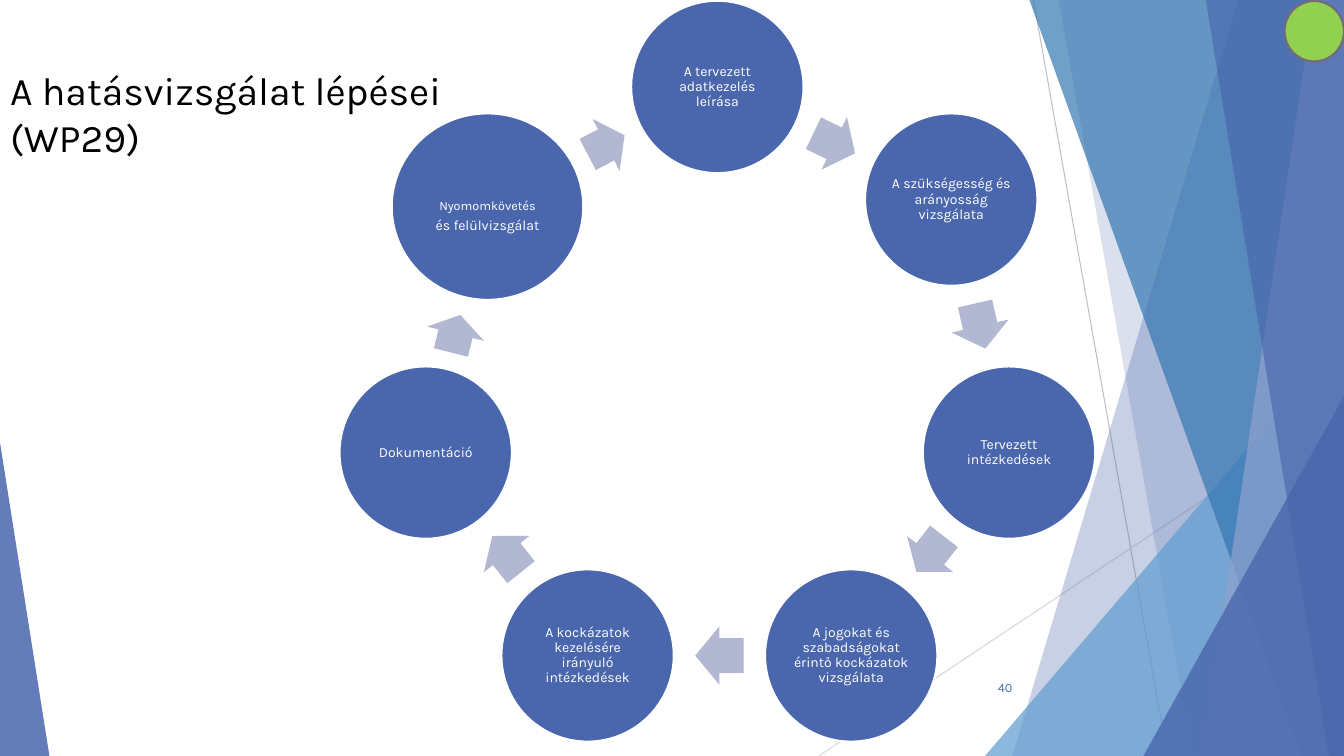
import math
from dataclasses import dataclass
from typing import Any

from lxml import etree
from pptx import Presentation
from pptx import util as u
from pptx.dml import color
from pptx.enum import shapes, text
from pptx.oxml import ns

PX = 9144  # EMU per px, 100 px to the inch
WIDE, HIGH = 1333, 750
KIND = shapes.MSO_SHAPE


@dataclass(frozen=True)
class Theme:
    face: str = "Karla"
    blue: str = "4A66AC"
    sky: str = "629DD1"
    deep: str = "3477B2"
    pale: str = "90A2CF"
    arrow: str = "B2B8D2"
    green: str = "92D050"
    rim: str = "746B76"
    white: str = "FFFFFF"
    black: str = "000000"
    head: int = 28
    body: int = 10
    small: int = 9


@dataclass(frozen=True)
class Ray:
    start: tuple[int, int]
    end: tuple[int, int]
    tint: str


@dataclass(frozen=True)
class Pane:
    """A see-through band between the top and bottom slide edges."""
    points: tuple[tuple[int, int], ...]
    tint: str
    cover: int


@dataclass(frozen=True)
class Wedge:
    """A see-through right triangle; lean 0 or 1 puts its tip left or right."""
    box: tuple[int, int, int, int]
    lean: int
    tint: str
    cover: int


@dataclass(frozen=True)
class Step:
    lines: tuple[tuple[str, int], ...]
    wide: int = 171
    high: int = 171
    shift: tuple[int, int] = (0, 0)
    drop: int = 1  # top inset


T = Theme()
MID, RING = (711.5, 383), 296.7

RAYS = (
    Ray((1025, 0), (1158, HIGH), "BFBFBF"),
    Ray((WIDE, 403), (812, HIGH), "D9D9D9"),
)


def band(top: int, base: int, tint: str, cover: int) -> Pane:
    return Pane(((top, 0), (WIDE, 0), (WIDE, HIGH), (base, HIGH)), tint, cover)


DECOR = (
    band(1228, 1004, T.blue, 30),
    band(1050, 1183, T.blue, 20),
    Wedge((977, 333, 356, 417), 1, T.sky, 72),
    band(1021, 1291, T.deep, 70),
    band(1303, 1192, T.pale, 70),
    band(1196, 1318, T.blue, 65),
    Wedge((1134, 393, 199, 357), 1, T.blue, 80),
    Wedge((0, 439, 49, 311), 0, T.blue, 85),
)

STEPS = (
    Step((("A tervezett adatkezelés leírása", T.body),)),
    Step((("A szükségesség és arányosság vizsgálata", T.body),)),
    Step((("Tervezett intézkedések", T.body),)),
    Step((("A jogokat és szabadságokat érintő kockázatok vizsgálata", T.body),),
         shift=(4, 0)),
    Step((("A kockázatok kezelésére irányuló intézkedések", T.body),)),
    Step((("Dokumentáció", T.body),)),
    Step((("Nyomomkövetés", T.small), ("és felülvizsgálat", T.body)),
         wide=190, high=185, shift=(4, 7), drop=20),
)


def px(*sizes: float) -> list[u.Emu]:
    return [u.Emu(round(size * PX)) for size in sizes]


def rgb(tint: str) -> color.RGBColor:
    return color.RGBColor.from_string(tint)


def apply(thing: Any, form: dict[str, Any]) -> None:
    for name, value in form.items():
        setattr(thing, name, value)


def paint(shape: Any, tint: str, cover: int = 100, rim: str = "") -> None:
    """Fill a shape, with an optional 1.5 pt outline."""
    shape.shadow.inherit = False
    shape.fill.solid()
    shape.fill.fore_color.rgb = rgb(tint)
    if cover < 100:
        mark = shape.element.spPr.find(".//" + ns.qn("a:srgbClr"))
        etree.SubElement(mark, ns.qn("a:alpha"), val=str(cover * 1000))
    if rim:
        shape.line.color.rgb = rgb(rim)
        shape.line.width = u.Pt(1.5)
    else:
        shape.line.fill.background()


def write(shape: Any, lines: tuple[tuple[str, int], ...], tint: str,
          frame: dict[str, Any], para: dict[str, Any]) -> None:
    body = shape.text_frame
    apply(body, {"word_wrap": True, "auto_size": text.MSO_AUTO_SIZE.NONE} | frame)
    for rank, (words, size) in enumerate(lines):
        part = body.add_paragraph() if rank else body.paragraphs[0]
        apply(part, para | ({"space_before": u.Pt(3.5)} if rank else {}))
        run = part.add_run()
        run.text = words
        apply(run.font, {"name": T.face, "size": u.Pt(size)})
        run.font.color.rgb = rgb(tint)


def draw_ray(slide: Any, ray: Ray) -> None:
    line = slide.shapes.add_connector(
        shapes.MSO_CONNECTOR.STRAIGHT, *px(*ray.start, *ray.end))
    line.line.color.rgb = rgb(ray.tint)
    line.line.width = u.Pt(0.75)
    etree.SubElement(line.element.spPr, ns.qn("a:effectLst"))


def draw_decor(slide: Any, item: Pane | Wedge) -> None:
    if isinstance(item, Pane):
        pen = slide.shapes.build_freeform(*item.points[0], scale=PX)
        pen.add_line_segments(item.points[1:], close=True)
        shape = pen.convert_to_shape()
    else:
        shape = slide.shapes.add_shape(KIND.ISOSCELES_TRIANGLE, *px(*item.box))
        shape.adjustments[0] = item.lean
    paint(shape, item.tint, item.cover)


def place(rank: int) -> tuple[float, float]:
    """Centre of a step on the ring, clockwise from the top."""
    turn = math.tau * rank / len(STEPS)
    across, down = STEPS[rank].shift
    return (MID[0] + RING * math.sin(turn) + across,
            MID[1] - RING * math.cos(turn) + down)


def draw_step(slide: Any, rank: int) -> None:
    step, (x, y) = STEPS[rank], place(rank)
    disc = slide.shapes.add_shape(KIND.OVAL, *px(
        x - step.wide / 2, y - step.high / 2, step.wide, step.high))
    paint(disc, T.blue, rim=T.white)
    left, top, right, base = px(1, step.drop, 1, 1)
    write(disc, step.lines, T.white,
          {"margin_left": left, "margin_top": top, "margin_right": right,
           "margin_bottom": base, "vertical_anchor": text.MSO_ANCHOR.MIDDLE},
          {"alignment": text.PP_ALIGN.CENTER, "line_spacing": 0.9})


def draw_arrow(slide: Any, rank: int) -> None:
    """Centre an arrow in the gap between a step and the next one."""
    after = (rank + 1) % len(STEPS)
    (x, y), (next_x, next_y) = place(rank), place(after)
    reach = math.dist((x, y), (next_x, next_y))
    near, far = [(STEPS[n].wide + STEPS[n].high) / 4 for n in (rank, after)]
    gap = reach - near - far
    part = (near + gap / 2) / reach
    long, high = 0.53 * gap, 58
    arrow = slide.shapes.add_shape(KIND.RIGHT_ARROW, *px(
        x + (next_x - x) * part - long / 2,
        y + (next_y - y) * part - high / 2, long, high))
    arrow.adjustments[0], arrow.adjustments[1] = 0.6, 0.5
    arrow.rotation = math.degrees(math.atan2(next_y - y, next_x - x)) % 360
    paint(arrow, T.arrow)


def main() -> None:
    deck = Presentation()
    deck.slide_width, deck.slide_height = px(WIDE, HIGH)
    slide = deck.slides.add_slide(deck.slide_layouts[5])
    slide.background.fill.solid()
    slide.background.fill.fore_color.rgb = rgb(T.white)
    for ray in RAYS:
        draw_ray(slide, ray)
    for item in DECOR:
        draw_decor(slide, item)

    title = slide.shapes.title
    apply(title, dict(zip(("left", "top", "width", "height"), px(0, 61, 574, 57))))
    write(title, (("A hatásvizsgálat lépései (WP29)", T.head),), T.black,
          {"vertical_anchor": text.MSO_ANCHOR.TOP},
          {"alignment": text.PP_ALIGN.LEFT})
    page = slide.shapes.add_textbox(*px(939, 662, 75, 40))
    write(page, (("40", T.small),), T.blue,
          {"vertical_anchor": text.MSO_ANCHOR.MIDDLE},
          {"alignment": text.PP_ALIGN.RIGHT})
    badge = slide.shapes.add_shape(KIND.OVAL, *px(1274, 1, 59, 60))
    paint(badge, T.green, rim=T.rim)

    for rank in range(len(STEPS)):
        draw_step(slide, rank)
        draw_arrow(slide, rank)
    deck.save("out.pptx")


if __name__ == "__main__":
    main()
